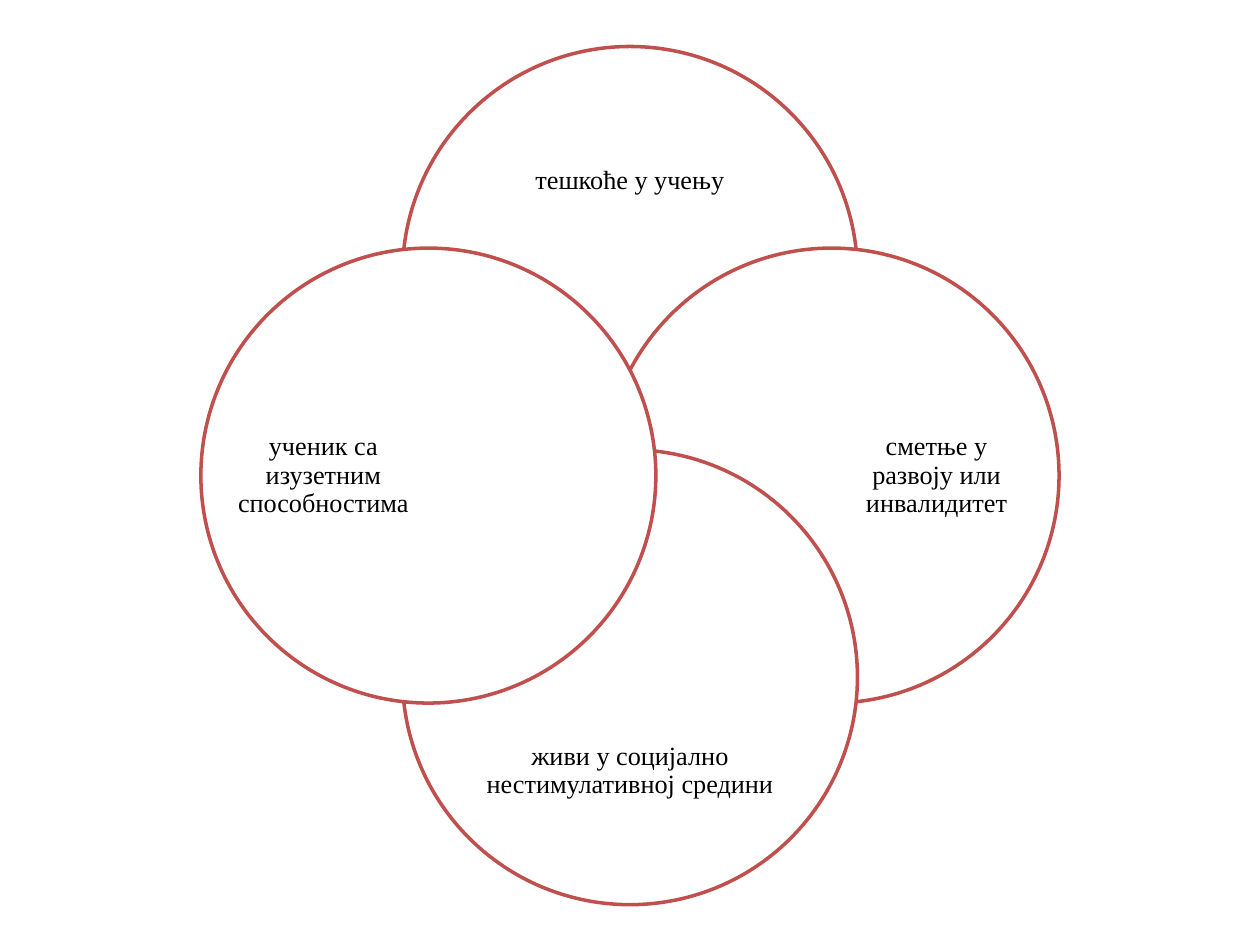
from pptx import Presentation
from pptx.dml.color import RGBColor
from pptx.enum.shapes import MSO_SHAPE
from pptx.enum.text import MSO_ANCHOR, PP_ALIGN
from pptx.util import Pt

OVAL = MSO_SHAPE.OVAL
MIDDLE = MSO_ANCHOR.MIDDLE
CENTER = PP_ALIGN.CENTER

WHITE = RGBColor(0xFF, 0xFF, 0xFF)
BLACK = RGBColor(0x00, 0x00, 0x00)
RED = RGBColor(0xC0, 0x50, 0x4D)

DIAMETER = 260
SHIFT = 115.2
WIDE = (200, 82.8)
TALL = (100, 200)

FRAME_FORMAT = {
    "word_wrap": True,
    "vertical_anchor": MIDDLE,
    "margin_left": 0,
    "margin_right": 0,
    "margin_top": 0,
    "margin_bottom": 0,
}
PARA_FORMAT = {"alignment": CENTER, "line_spacing": 0.9}
FONT_FORMAT = {"name": "Times New Roman", "size": Pt(15)}

# direction of the circle, label offset inside it, label size, label text
CIRCLES = [
    ((0, -1), (30, 35.3), WIDE, "тешкоће у учењу"),
    ((1, 0), (140, 30), TALL, "сметње у развоју или инвалидитет"),
    ((0, 1), (30, 142.2), WIDE, "живи у социјално нестимулативној средини"),
    ((-1, 0), (20, 30), TALL, "ученик са изузетним способностима"),
]


def apply_format(target, values):
    """Set every attribute named in values on target."""
    for name, value in values.items():
        setattr(target, name, value)


def add_circle(shapes, left, top):
    """Draw one outlined circle at the given corner."""
    circle = shapes.add_shape(OVAL, Pt(left), Pt(top), Pt(DIAMETER), Pt(DIAMETER))
    circle.shadow.inherit = False
    circle.fill.solid()
    circle.fill.fore_color.rgb = WHITE
    circle.line.color.rgb = RED
    circle.line.width = Pt(2)


def add_label(shapes, left, top, size, text):
    """Write one centred label in a box of the given size."""
    width, height = size
    box = shapes.add_textbox(Pt(left), Pt(top), Pt(width), Pt(height))
    apply_format(box.text_frame, FRAME_FORMAT)
    para = box.text_frame.paragraphs[0]
    apply_format(para, PARA_FORMAT)
    span = para.add_run()
    span.text = text
    apply_format(span.font, FONT_FORMAT)
    span.font.color.rgb = BLACK


def add_venn(page, center_x, center_y):
    """Arrange the four labelled circles around a centre point."""
    shapes = page.shapes.add_group_shape().shapes
    for (step_x, step_y), (inset_x, inset_y), size, text in CIRCLES:
        left = center_x + step_x * SHIFT - DIAMETER / 2
        top = center_y + step_y * SHIFT - DIAMETER / 2
        add_circle(shapes, left, top)
        add_label(shapes, left + inset_x, top + inset_y, size, text)


def main():
    """Build and save the deck."""
    deck = Presentation()
    deck.slide_width, deck.slide_height = Pt(720), Pt(540)
    page = deck.slides.add_slide(deck.slide_layouts[6])
    add_venn(page, 360, 271.8)
    deck.save("out.pptx")


if __name__ == "__main__":
    main()
